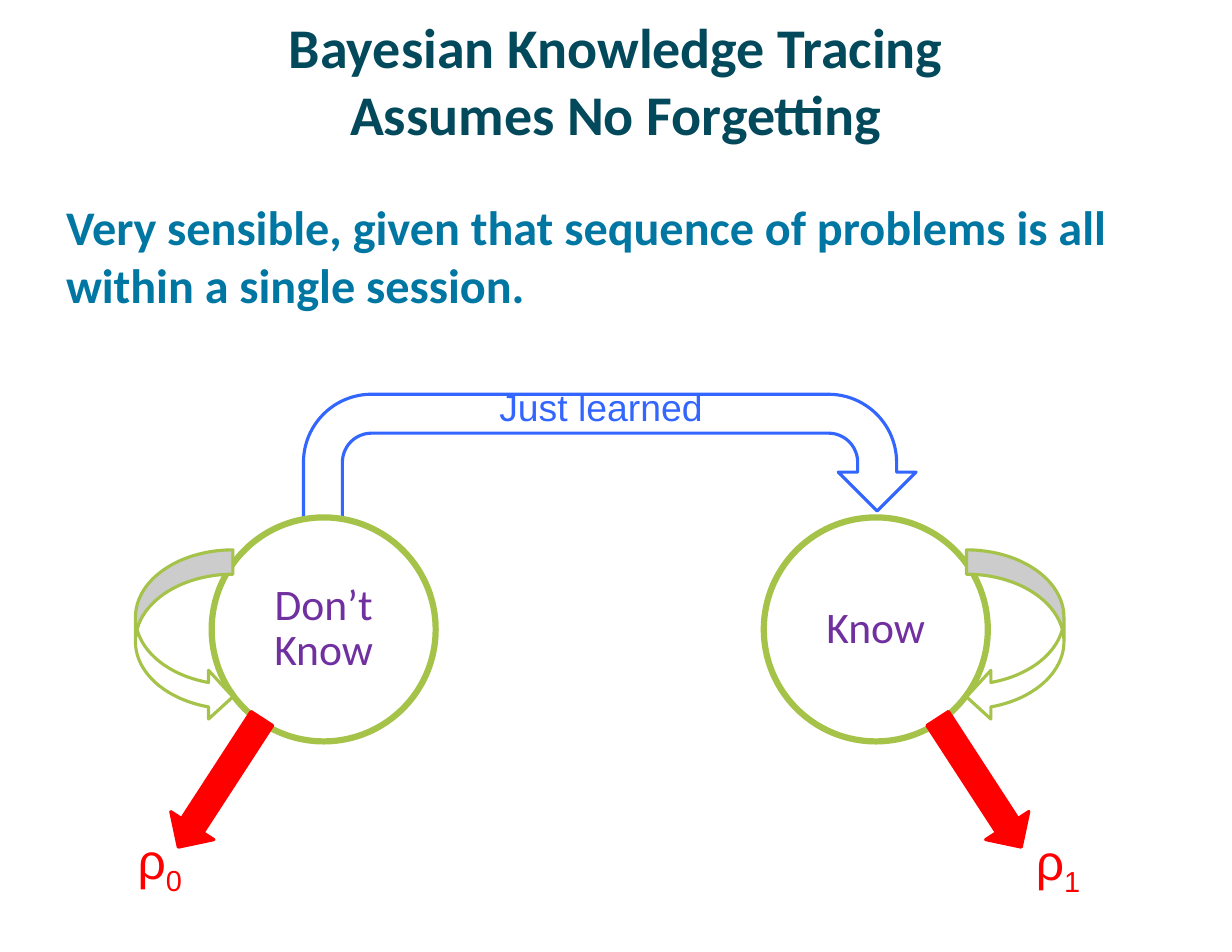
import pptx
import pptx.dml.color
import pptx.enum.shapes
import pptx.enum.text
import pptx.util

Inches = pptx.util.Inches
Pt = pptx.util.Pt
RGB = pptx.dml.color.RGBColor.from_string
SHAPE = pptx.enum.shapes.MSO_SHAPE
ALIGN = pptx.enum.text.PP_ALIGN
ANCHOR = pptx.enum.text.MSO_ANCHOR

HEX = {
    "title": "03495C", "body": "0076A3", "white": "FFFFFF", "blue": "3366FF",
    "green": "A5C249", "purple": "7030A0", "red": "FF0000",
}
HEAD = {"size": Pt(36), "name": "Calibri", "bold": True}
BODY = {"size": Pt(31), "name": "Calibri", "bold": True}
STATE = {"size": Pt(28), "name": "Calibri"}
LABEL = {"size": Pt(24), "name": "Arial"}
RHO = {"size": Pt(32), "name": "Arial"}


def add_run(para, text, font, color):
    run = para.add_run()
    run.text = text
    for key, value in font.items():
        setattr(run.font, key, value)
    run.font.color.rgb = RGB(HEX[color])
    return run


def add_text(slide, box, lines, font, color, frame=None, para=None):
    """Add a text box whose lines share one paragraph; return that paragraph."""
    text = slide.shapes.add_textbox(*map(Inches, box)).text_frame
    text.word_wrap = True
    for key, value in (frame or {}).items():
        setattr(text, key, value)
    first = text.paragraphs[0]
    for key, value in (para or {}).items():
        setattr(first, key, value)
    for index, line in enumerate(lines):
        if index:
            first.add_line_break()
        add_run(first, line, font, color)
    return first


def add_form(slide, kind, box, fill, line, width=2, turn=0, flip=False):
    form = slide.shapes.add_shape(kind, *map(Inches, box))
    form.shadow.inherit = False
    form.fill.solid()
    form.fill.fore_color.rgb = RGB(HEX[fill])
    form.line.color.rgb = RGB(HEX[line])
    form.line.width = Pt(width)
    form.rotation = turn
    if flip:
        form._element.spPr.xfrm.set("flipH", "1")
    return form


def add_state(slide, left, name):
    form = add_form(slide, SHAPE.OVAL, (left, 4.62, 2, 2), "white", "green", 4)
    form.text_frame.vertical_anchor = ANCHOR.MIDDLE
    para = form.text_frame.paragraphs[0]
    para.alignment = ALIGN.CENTER
    para.line_spacing = 0.87
    add_run(para, name, STATE, "purple")


def add_rho(slide, left, top, index):
    para = add_text(slide, (left, top, 0.68, 0.58), ["ρ"], RHO, "red",
                    para={"line_spacing": 0.87})
    sub = add_run(para, index, RHO, "red")
    sub.font._element.set("baseline", "-25000")


def main():
    deck = pptx.Presentation()
    deck.slide_width, deck.slide_height = Inches(11), Inches(8.5)
    slide = deck.slides.add_slide(deck.slide_layouts[6])

    # Title and statement
    inset = {"margin_left": Inches(0.11), "margin_right": Inches(0.11),
             "margin_top": Inches(0.06), "margin_bottom": Inches(0.06)}
    add_text(slide, (0.55, 0.19, 9.9, 1.04),
             ["Bayesian Knowledge Tracing", "Assumes No Forgetting"],
             HEAD, "title", {**inset, "vertical_anchor": ANCHOR.MIDDLE},
             {"alignment": ALIGN.CENTER})
    add_text(slide, (0.48, 1.7, 9.97, 5.89),
             ["Very sensible, given that sequence of problems is all "
              "within a single session."], BODY, "body", inset)

    # Learning step between the two states
    add_form(slide, SHAPE.U_TURN_ARROW, (2.71, 3.52, 5.47, 1.39),
             "white", "blue")
    add_state(slide, 1.89, "Don’t Know")
    add_state(slide, 6.82, "Know")
    add_text(slide, (4.36, 3.44, 2.04, 0.46), ["Just learned"], LABEL, "blue",
             {"word_wrap": False}, {"line_spacing": 0.87})

    # Loops and outputs, mirrored from right to left
    for loop, out, turn, flip in ((8.63, 8.06, 57, False),
                                  (1.21, 1.28, 303, True)):
        add_form(slide, SHAPE.CURVED_LEFT_ARROW, (loop, 4.91, 0.87, 1.53),
                 "white", "green", flip=flip)
        add_form(slide, SHAPE.RIGHT_ARROW, (out, 6.76, 1.37, 0.46),
                 "red", "red", turn=turn, flip=flip)

    # Output chances
    add_rho(slide, 9.15, 7.39, "1")
    add_rho(slide, 1.13, 7.38, "0")

    deck.save("out.pptx")


if __name__ == "__main__":
    main()
